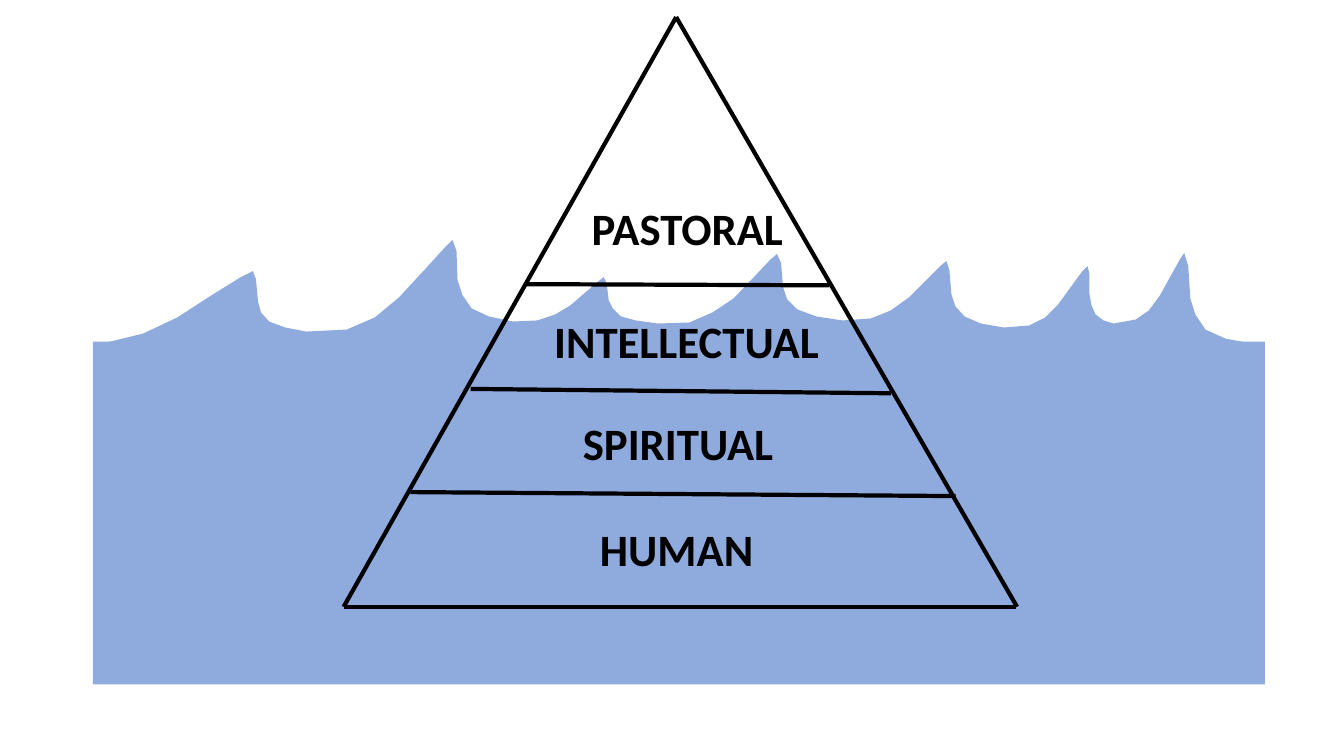
from lxml import etree
from pptx import Presentation
from pptx.dml.color import RGBColor
from pptx.enum.shapes import MSO_CONNECTOR, MSO_SHAPE
from pptx.enum.text import PP_ALIGN
from pptx.oxml.ns import qn
from pptx.util import Cm, Pt

BLACK = RGBColor(0x00, 0x00, 0x00)
SEA = RGBColor(0x8F, 0xAA, 0xDC)
RECT = MSO_SHAPE.RECTANGLE
LINE = MSO_CONNECTOR.STRAIGHT
LEFT = PP_ALIGN.LEFT
MID = PP_ALIGN.CENTER
GRID = Cm(2.54) / 100  # length of one wave unit

# Foot, peak and end of each wave, in wave units
WAVES = [
    ((101, 341), (251, 269), (304, 329)),
    ((344, 327), (449, 238), (509, 319)),
    ((533, 318), (599, 275), (653, 321)),
    ((684, 320), (771, 252), (836, 318)),
    ((864, 316), (939, 259), (996, 325)),
    ((1021, 323), (1079, 264), (1105, 321)),
    ((1127, 317), (1175, 251), (1243, 341)),
]
# Shares of the way across and up or down: slow climb, steep drop
CLIMB = [(0, 0), (0.27, 0.14), (0.5, 0.36), (0.73, 0.66), (0.92, 0.91)]
DROP = [(0, 0), (0.06, 0.14), (0.09, 0.5), (0.16, 0.68),
        (0.31, 0.84), (0.6, 0.94), (1, 1)]

# Text, left, top, width (cm) and alignment of each level
LEVELS = [
    ("PASTORAL", 14.66, 4.93, 5.41, LEFT),
    ("INTELLECTUAL", 12.24, 7.77, 10.13, MID),
    ("SPIRITUAL", 12.9, 10.34, 8.38, MID),
    ("HUMAN", 13.31, 13.03, 7.49, MID),
]

# Start and end (cm) of each line of the pyramid
EDGES = [
    (8.66, 15.29, 25.6, 15.29),
    (8.66, 15.29, 17.04, 0.43),
    (25.63, 15.29, 17.04, 0.43),
    (10.34, 12.4, 24.08, 12.5),
    (11.86, 9.8, 22.45, 9.91),
    (13.28, 7.16, 20.9, 7.19),
]

deck = Presentation()
deck.slide_width, deck.slide_height = Cm(33.87), Cm(19.05)
shapes = deck.slides.add_slide(deck.slide_layouts[6]).shapes

# Sea: waves on top of a block of water
points = []
for foot, peak, end in WAVES:
    for (x1, y1), (x2, y2), curve in ((foot, peak, CLIMB), (peak, end, DROP)):
        for across, along in curve:
            points.append((x1 + (x2 - x1) * across, y1 + (y2 - y1) * along))
points.append((1255, 341))
pen = shapes.build_freeform(*points[0], scale=GRID)
pen.add_line_segments(points[1:], close=True)
crest = pen.convert_to_shape()
water = shapes.add_shape(RECT, Cm(2.34), Cm(8.61), Cm(29.54), Cm(8.64))
for part in (crest, water):
    part.shadow.inherit = False
    part.fill.solid()
    part.fill.fore_color.rgb = SEA
    part.line.fill.background()

# Level names
for name, left, top, width, align in LEVELS:
    box = shapes.add_textbox(Cm(left), Cm(top), Cm(width), Cm(1.63))
    box.text_frame.word_wrap = True
    para = box.text_frame.paragraphs[0]
    para.alignment = align
    run = para.add_run()
    run.text = name
    run.font.name = "Calibri"
    run.font.size = Pt(32)
    run.font.bold = True
    run.font.color.rgb = BLACK

# Pyramid
for edge in EDGES:
    line = shapes.add_connector(LINE, *[Cm(n) for n in edge])
    line.line.color.rgb = BLACK
    line.line.width = Pt(3)
    etree.SubElement(line._element.spPr, qn("a:effectLst"))

deck.save("out.pptx")
